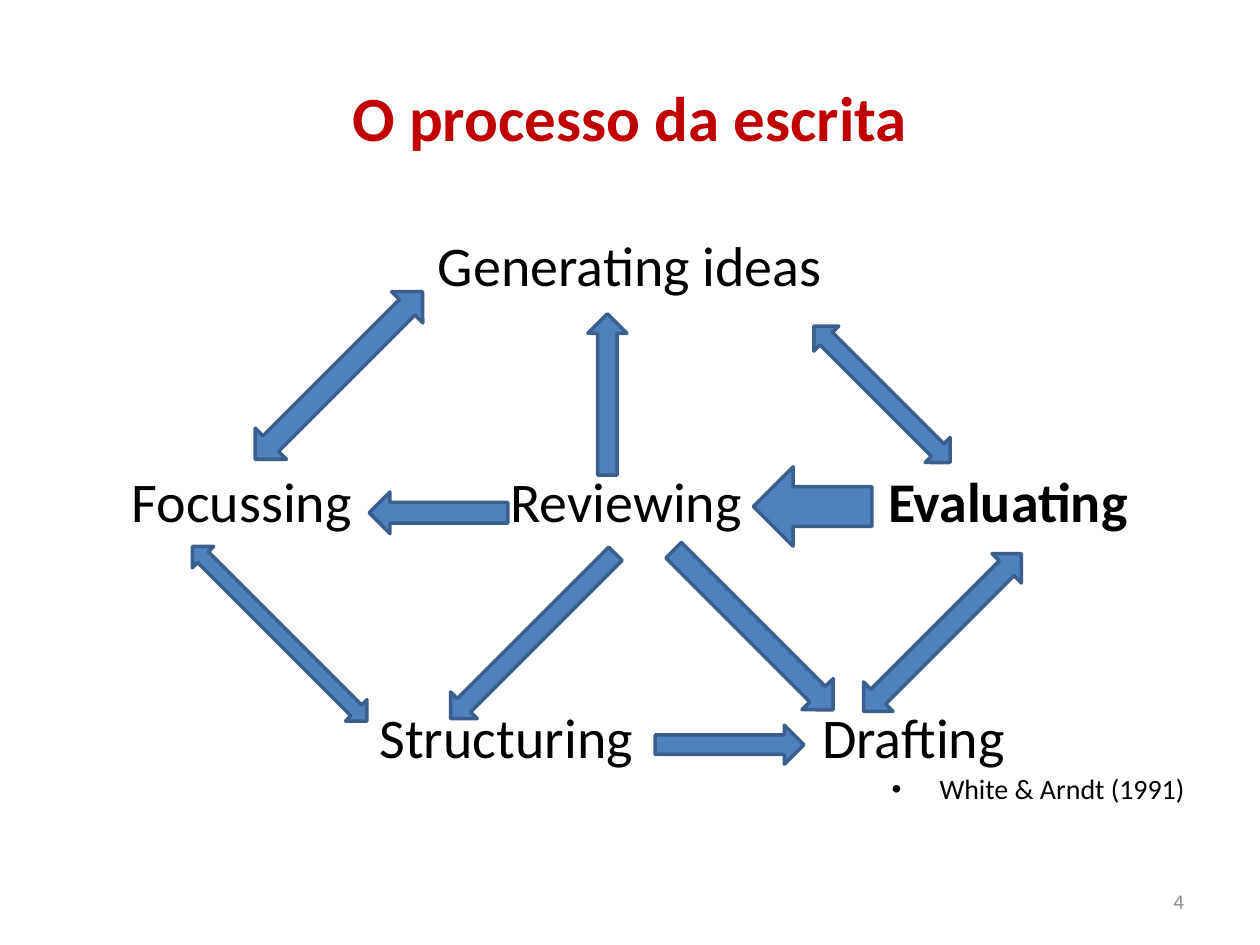
from lxml import etree
from pptx import Presentation
from pptx.dml.color import RGBColor
from pptx.enum.shapes import MSO_SHAPE
from pptx.enum.text import MSO_ANCHOR, PP_ALIGN
from pptx.oxml.ns import qn
from pptx.util import Inches, Pt

ONE_WAY, TWO_WAY = MSO_SHAPE.DOWN_ARROW, MSO_SHAPE.UP_DOWN_ARROW
CENTER, RIGHT = PP_ALIGN.CENTER, PP_ALIGN.RIGHT
MIDDLE = MSO_ANCHOR.MIDDLE

RED = RGBColor(0xC0, 0x00, 0x00)
BLACK = RGBColor(0x00, 0x00, 0x00)
GRAY = RGBColor(0x8C, 0x8C, 0x8C)
BLUE = RGBColor(0x4F, 0x81, 0xBD)
DARK_BLUE = RGBColor(0x3A, 0x5F, 0x8C)

TITLE = "O processo da escrita"
CITATION = "White & Arndt (1991)"
SLIDE_NUMBER = "4"

# Rows of stages: (name, centre x, bold)
STAGE_ROWS = [
    [("Generating ideas", 5.0, False)],
    [("Focussing", 1.92, False), ("Reviewing", 4.97, False), ("Evaluating", 8.0, True)],
    [("Structuring", 4.02, False), ("Drafting", 7.25, False)],
]
FIRST_ROW_Y, ROW_STEP = 2.1, 1.87
STAGE_W, STAGE_H = 3.4, 0.6

# (kind, centre x, centre y, width, length, clockwise turn from pointing down)
ARROWS = [
    (ONE_WAY, 6.45, 4.02, 0.63, 0.94, 90),     # Evaluating to Reviewing
    (ONE_WAY, 5.98, 5.0, 0.35, 1.79, 315),     # Reviewing to Drafting
    (ONE_WAY, 4.23, 5.05, 0.3, 1.85, 45),      # Reviewing to Structuring
    (ONE_WAY, 3.48, 4.07, 0.33, 1.1, 90),      # Reviewing to Focussing
    (ONE_WAY, 4.82, 3.13, 0.31, 1.28, 180),    # Reviewing to Generating ideas
    (ONE_WAY, 5.79, 5.91, 0.31, 1.18, 270),    # Structuring to Drafting
    (TWO_WAY, 7.0, 3.13, 0.28, 1.53, 315),     # Generating ideas, Evaluating
    (TWO_WAY, 7.48, 5.02, 0.33, 1.77, 45),     # Evaluating, Drafting
    (TWO_WAY, 2.69, 2.98, 0.35, 1.88, 45),     # Generating ideas, Focussing
    (TWO_WAY, 2.22, 5.03, 0.24, 1.96, 315),    # Focussing, Structuring
]


def write(frame, text, size, color, align, bold=False):
    frame.word_wrap = True
    frame.vertical_anchor = MIDDLE
    paragraph = frame.paragraphs[0]
    paragraph.alignment = align
    run = paragraph.add_run()
    run.text = text
    run.font.color.rgb = color
    for name, value in {"name": "Calibri", "size": Pt(size), "bold": bold}.items():
        setattr(run.font, name, value)
    return paragraph


def centered_box(x, y, width, height):
    return [Inches(v) for v in (x - width / 2, y - height / 2, width, height)]


def add_label(slide, box, *style):
    return write(slide.shapes.add_textbox(*box).text_frame, *style)


def add_bullet(paragraph, indent):
    properties = paragraph._p.get_or_add_pPr()
    properties.set("marL", str(Inches(indent)))
    properties.set("indent", str(-Inches(indent)))
    etree.SubElement(properties, qn("a:buFont"), typeface="Arial")
    etree.SubElement(properties, qn("a:buChar"), char="•")


def add_arrow(slide, kind, x, y, width, length, turn):
    arrow = slide.shapes.add_shape(kind, *centered_box(x, y, width, length))
    arrow.rotation = turn
    arrow.shadow.inherit = False
    arrow.fill.solid()
    arrow.fill.fore_color.rgb = BLUE
    arrow.line.color.rgb = DARK_BLUE
    arrow.line.width = Pt(2)


def main():
    deck = Presentation()
    deck.slide_width, deck.slide_height = Inches(10), Inches(7.5)
    slide = deck.slides.add_slide(deck.slide_layouts[5])

    title = slide.shapes.title
    title.left, title.top, title.width, title.height = [
        Inches(v) for v in (0.5, 0.3, 9, 1.25)]
    write(title.text_frame, TITLE, 36, RED, CENTER, True)

    for row, stages in enumerate(STAGE_ROWS):
        y = FIRST_ROW_Y + row * ROW_STEP
        for name, x, bold in stages:
            add_label(slide, centered_box(x, y, STAGE_W, STAGE_H),
                      name, 32, BLACK, CENTER, bold)

    citation = add_label(slide, centered_box(8.0, 6.26, 3, 0.4),
                         CITATION, 16, BLACK, RIGHT)
    add_bullet(citation, 0.38)

    for arrow in ARROWS:
        add_arrow(slide, *arrow)

    add_label(slide, centered_box(8.33, 7.15, 2.33, 0.4), SLIDE_NUMBER, 12, GRAY, RIGHT)
    deck.save("out.pptx")


if __name__ == "__main__":
    main()
